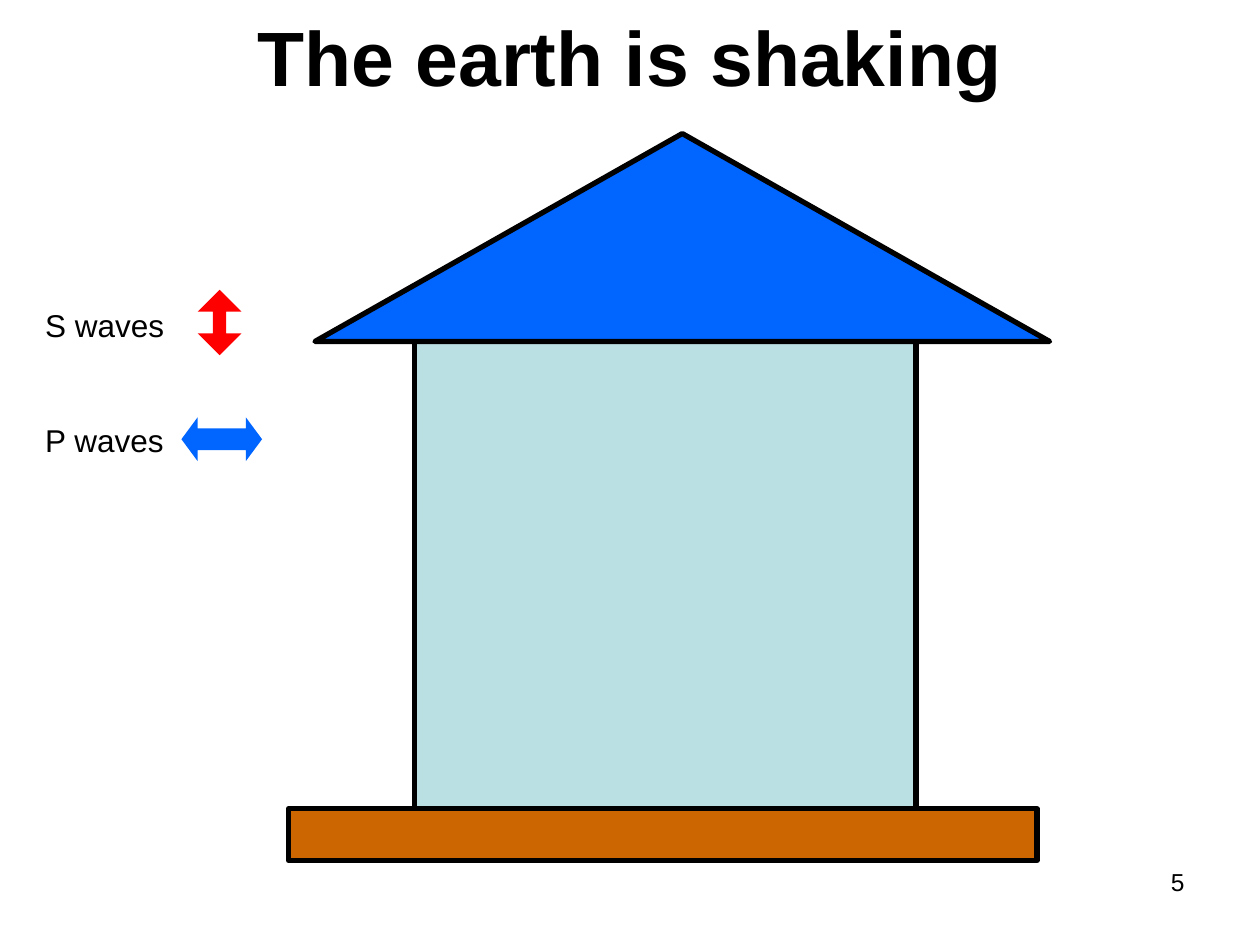
from pptx import Presentation
from pptx.dml.color import RGBColor
from pptx.enum import shapes, text
from pptx.util import Pt

FONT = "Arial"
BLACK = RGBColor(0x00, 0x00, 0x00)
BLUE = RGBColor(0x00, 0x66, 0xFF)
PALE_TEAL = RGBColor(0xBB, 0xE0, 0xE3)
BROWN = RGBColor(0xCC, 0x66, 0x00)
RED = RGBColor(0xFF, 0x00, 0x00)

KIND = shapes.MSO_SHAPE
ALIGN = text.PP_ALIGN

# kind, (left, top, width, height), fill
HOUSE = [
    (KIND.RECTANGLE, (236.9, 191.5, 286.6, 286.6), PALE_TEAL),
    (KIND.ISOSCELES_TRIANGLE, (180, 76.3, 419.8, 118.8), BLUE),
    (KIND.RECTANGLE, (164.9, 462.2, 427.7, 29.5), BROWN),
]
# kind, (left, top, width, height), fill, length of each arrowhead
WAVE_ARROWS = [
    (KIND.LEFT_RIGHT_ARROW, (103.7, 238.5, 46.1, 25), BLUE, 0.37),
    (KIND.UP_DOWN_ARROW, (113, 165.6, 25, 37.4), RED, 0.3),
]
TITLE = "The earth is shaking"
WAVES = ["S waves", "P waves"]
SLIDE_NUMBER = "5"


def add_text(slide, box, lines, size, bold=False, align=ALIGN.LEFT,
             anchor=text.MSO_ANCHOR.TOP, gap=0):
    """Add a text box with one paragraph per line, set gap points apart."""
    frame = slide.shapes.add_textbox(*map(Pt, box)).text_frame
    frame.word_wrap = True
    frame.vertical_anchor = anchor
    for index, line in enumerate(lines):
        paragraph = frame.add_paragraph() if index else frame.paragraphs[0]
        paragraph.alignment = align
        paragraph.space_before = Pt(gap if index else 0)
        run = paragraph.add_run()
        run.text = line
        run.font.name = FONT
        run.font.size = Pt(size)
        run.font.bold = bold
        run.font.color.rgb = BLACK


def add_filled(slide, kind, box, fill, outlined=False):
    shape = slide.shapes.add_shape(kind, *map(Pt, box))
    shape.shadow.inherit = False
    shape.fill.solid()
    shape.fill.fore_color.rgb = fill
    if outlined:
        shape.line.color.rgb = BLACK
        shape.line.width = Pt(3)
    else:
        shape.line.fill.background()
    return shape


def main():
    presentation = Presentation()
    presentation.slide_width, presentation.slide_height = Pt(720), Pt(540)
    slide = presentation.slides.add_slide(presentation.slide_layouts[6])

    add_text(slide, (0, -3.6, 720, 70.6), [TITLE], 44, bold=True,
             align=ALIGN.CENTER, anchor=text.MSO_ANCHOR.MIDDLE)
    for kind, box, fill in HOUSE:
        add_filled(slide, kind, box, fill, outlined=True)
    add_text(slide, (18.7, 171.4, 102.2, 93.6), WAVES, 18, gap=44)
    for kind, box, fill, head in WAVE_ARROWS:
        arrow = add_filled(slide, kind, box, fill)
        arrow.adjustments[0] = 0.5
        arrow.adjustments[1] = head
    add_text(slide, (516.2, 491.8, 167.8, 37.4), [SLIDE_NUMBER], 14,
             align=ALIGN.RIGHT)

    presentation.save("out.pptx")


if __name__ == "__main__":
    main()
